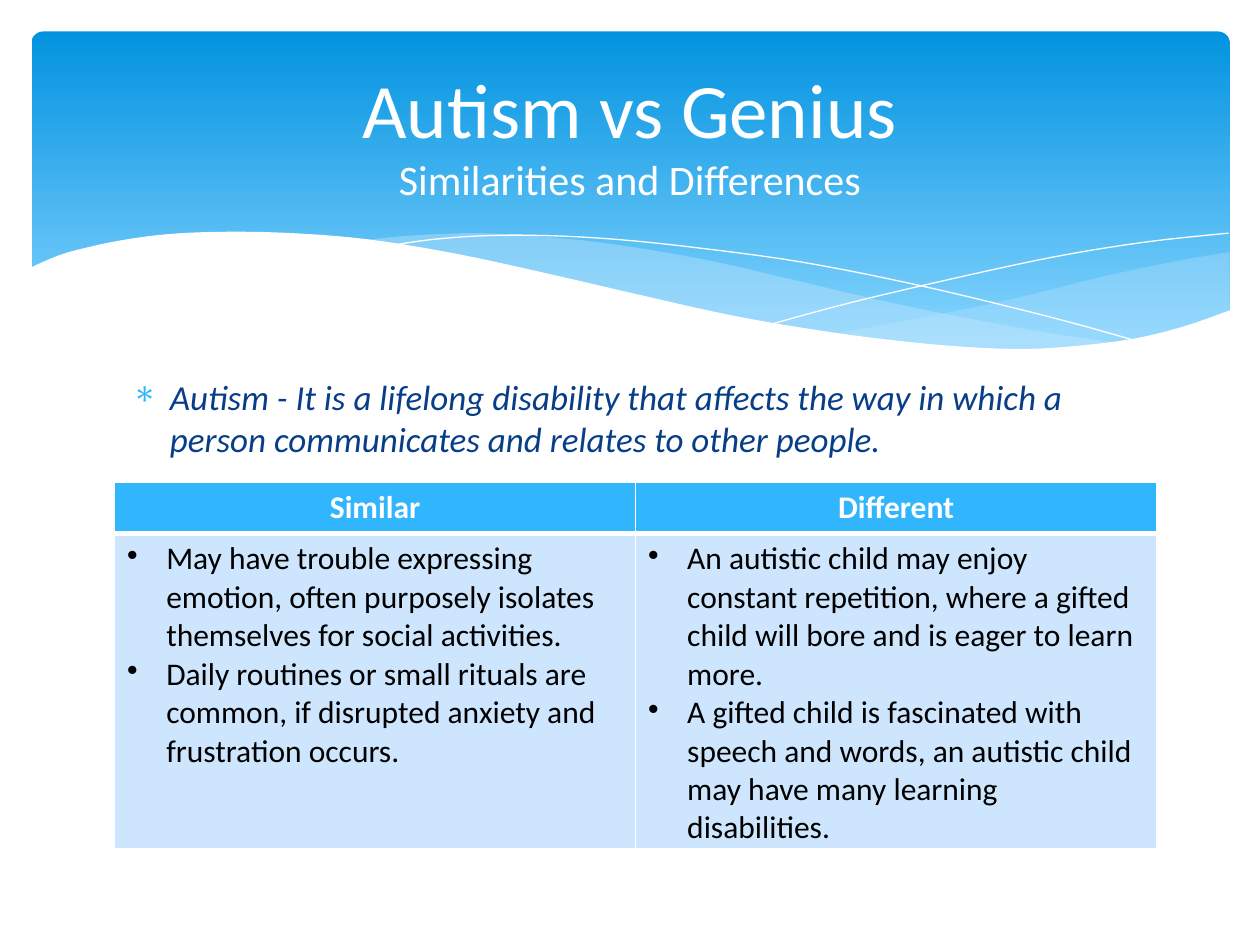
from lxml import etree
from pptx import Presentation
from pptx import util as u
from pptx.dml.color import RGBColor
from pptx.enum import shapes, text
from pptx.oxml import ns

WHITE = RGBColor(0xFF, 0xFF, 0xFF)
BLACK = RGBColor(0x00, 0x00, 0x00)
DEEP_BLUE = RGBColor(0x02, 0x93, 0xE0)
LIGHT_BLUE = RGBColor(0x83, 0xD3, 0xFE)
SKY = RGBColor(0x31, 0xB6, 0xFD)
PALE_WAVE = RGBColor(0xC6, 0xE7, 0xFC)
PALE_CELL = RGBColor(0xCE, 0xE5, 0xFE)
NAVY = RGBColor(0x07, 0x3E, 0x87)
FONT = "Calibri"

# The slide is a grid of 100 columns by 75 rows; boxes are (column, row, columns, rows)
COLUMNS, ROWS = 100, 75
CELL = u.Inches(0.1)

# Wave points, in grid cells from the corner of the header band
RIGHT_SWELL_TOP = [(97.6, 20), (93.5, 20.7), (89.1, 21.6), (86.1, 22.3), (80.5, 23.7),
                   (75.3, 24.8), (70.6, 25.7), (66.1, 26.5)]
RIGHT_SWELL_BASE = [(66.1, 26.5), (70.5, 27.1), (75.7, 27.6), (80.3, 27.8), (84.4, 27.7),
                    (88.1, 27.3), (91.3, 26.7), (94.2, 25.9), (97.6, 24.7)]
LONG_SWELL_TOP = [(89.3, 27.3), (83.7, 26.5), (77.5, 25.4), (70.6, 24), (62.9, 22.2),
                  (56.9, 20.8), (51.4, 19.8), (46.5, 19.1), (42, 18.7), (38, 18.5),
                  (34.4, 18.6), (31.3, 18.8), (28.6, 19.1)]
LONG_SWELL_BASE = [(28.6, 19.1), (34.2, 19.9), (40.4, 21.1), (49.1, 23.2), (56.6, 24.8),
                   (63.4, 26.1), (69.5, 27), (74.8, 27.6), (79.6, 27.8), (84.8, 27.7),
                   (89.3, 27.3)]
FALLING_LINE = [(30.9, 19.5), (34.4, 19), (38.7, 18.7), (43.3, 18.7), (48.9, 19),
                (55.6, 19.7), (63.6, 20.8), (72.7, 22.6), (83.1, 25.1), (90.7, 27.2)]
RISING_LINE = [(61.3, 25.7), (67.2, 24.1), (74.8, 22.3), (83.6, 20.4), (91, 19.2), (97.5, 18.5)]
HEM = [(97.7, 24.6), (94, 25.9), (89.9, 26.9), (85, 27.5), (80.9, 27.7), (76.1, 27.5),
       (70.8, 27), (64.8, 26.2), (57.9, 25), (50.3, 23.3), (44.7, 22), (36.5, 20.2),
       (29.2, 19), (23, 18.5), (17.7, 18.4), (13.2, 18.6), (9.5, 19.1), (6.7, 19.7),
       (4.6, 20.3), (2.3, 21.3)]
HEM_CORNERS = [(2.3, 32.9), (97.7, 32.9)]


def place(box):
    return [u.Emu(round(length * CELL)) for length in box]


def smooth(points, steps=5):
    """Catmull-Rom curve through the points."""
    padded = [points[0], *points, points[-1]]
    curve = [points[0]]
    for a, b, c, d in zip(padded, padded[1:], padded[2:], padded[3:]):
        for step in range(1, steps + 1):
            t = step / steps
            curve.append(tuple(
                (2 * q + (r - p) * t + (2 * p - 5 * q + 4 * r - s) * t ** 2
                 + (3 * q - p - 3 * r + s) * t ** 3) / 2
                for p, q, r, s in zip(a, b, c, d)))
    return curve


def add_wave(slide, box, points, color, opacity=100, closed=True):
    start, *rest = [tuple(place(point)) for point in points]
    builder = slide.shapes.build_freeform(*start)
    builder.add_line_segments(rest, close=closed)
    wave = builder.convert_to_shape(*place(box[:2]))
    wave.shadow.inherit = False
    if not closed:
        wave.fill.background()
        wave.line.color.rgb = color
        wave.line.width = u.Pt(0)
        return
    wave.line.fill.background()
    wave.fill.solid()
    wave.fill.fore_color.rgb = color
    if opacity < 100:
        tint = wave.fill._xPr.find(".//" + ns.qn("a:srgbClr"))
        etree.SubElement(tint, ns.qn("a:alpha"), val=str(opacity * 1000))


def add_header(slide, box):
    left, top, width, _ = box
    panel = slide.shapes.add_shape(shapes.MSO_SHAPE.ROUNDED_RECTANGLE,
                                   *place((left + 2.5, top + 2.5, width - 4.9, 27)))
    panel.adjustments[0] = 0.034
    panel.shadow.inherit = False
    panel.line.fill.background()
    panel.fill.gradient()
    panel.fill.gradient_angle = 270
    for stop, color, position in zip(panel.fill.gradient_stops,
                                     (DEEP_BLUE, LIGHT_BLUE), (0, 0.9)):
        stop.color.rgb = color
        stop.position = position

    add_wave(slide, box, smooth(RIGHT_SWELL_TOP) + smooth(RIGHT_SWELL_BASE), PALE_WAVE, 29)
    add_wave(slide, box, smooth(LONG_SWELL_TOP) + smooth(LONG_SWELL_BASE), PALE_WAVE, 40)
    for thread in (FALLING_LINE, RISING_LINE):
        add_wave(slide, box, smooth(thread), WHITE, closed=False)
    add_wave(slide, box, smooth(HEM) + HEM_CORNERS, WHITE)


def style_runs(paragraph, size, color, bold=False, italic=False):
    for run in paragraph.runs:
        run.font.name = FONT
        run.font.size = u.Pt(size)
        run.font.color.rgb = color
        run.font.bold = bold
        run.font.italic = italic


def set_bullet(paragraph, mark, indent, color=None):
    properties = paragraph._p.get_or_add_pPr()
    properties.set("marL", str(u.Inches(indent)))
    properties.set("indent", str(-u.Inches(indent)))
    if color is not None:
        holder = etree.SubElement(properties, ns.qn("a:buClr"))
        etree.SubElement(holder, ns.qn("a:srgbClr"), val=str(color))
    etree.SubElement(properties, ns.qn("a:buChar"), char=mark)


def add_title(slide, box, heading, subheading):
    frame = slide.shapes.add_textbox(*place(box)).text_frame
    frame.word_wrap = True
    frame.vertical_anchor = text.MSO_ANCHOR.MIDDLE
    title = frame.paragraphs[0]
    title.text = f"{heading}\v{subheading}"
    title.alignment = text.PP_ALIGN.CENTER
    style_runs(title, 44, WHITE)
    title.runs[1].font.size = u.Pt(24)


def add_definition(slide, box, wording):
    frame = slide.shapes.add_textbox(*place(box)).text_frame
    frame.word_wrap = True
    definition = frame.paragraphs[0]
    definition.text = wording
    definition.space_before = u.Pt(4)
    set_bullet(definition, "∗", 0.3, SKY)
    style_runs(definition, 20, NAVY, italic=True)


def set_borders(cell, bottom=1):
    properties = cell._tc.get_or_add_tcPr()
    for index, (side, width) in enumerate((("L", 1), ("R", 1), ("T", 1), ("B", bottom))):
        edge = etree.Element(ns.qn(f"a:ln{side}"), w=str(u.Pt(width)))
        fill = etree.SubElement(edge, ns.qn("a:solidFill"))
        etree.SubElement(fill, ns.qn("a:srgbClr"), val=str(WHITE))
        properties.insert(index, edge)


def add_comparison(slide, box, comparison):
    table = slide.shapes.add_table(2, len(comparison), *place(box)).table
    header_rows = 4.05
    table.rows[0].height, table.rows[1].height = place((header_rows, box[3] - header_rows))
    for column, (heading, points) in enumerate(comparison.items()):
        head, body = table.cell(0, column), table.cell(1, column)
        for cell, color, bottom in ((head, SKY, 3), (body, PALE_CELL, 1)):
            cell.fill.solid()
            cell.fill.fore_color.rgb = color
            set_borders(cell, bottom)
        head.text = heading
        label = head.text_frame.paragraphs[0]
        label.alignment = text.PP_ALIGN.CENTER
        style_runs(label, 18, WHITE, bold=True)
        body.text = "\n".join(points)
        for point in body.text_frame.paragraphs:
            set_bullet(point, "•", 0.31)
            style_runs(point, 18, BLACK)


def main():
    deck = Presentation()
    deck.slide_width, deck.slide_height = place((COLUMNS, ROWS))
    slide = deck.slides.add_slide(deck.slide_layouts[6])

    add_header(slide, (0, 0, COLUMNS, 33))
    add_definition(slide, (9.5, 29.3, 81, 37.7),
                   "Autism - It is a lifelong disability that affects the way in which "
                   "a person communicates and relates to other people.")
    add_title(slide, (5, 3.7, 90, 13.7), "Autism vs Genius", "Similarities and Differences")
    add_comparison(slide, (9.1, 38.3, 82.7, 29.1), {
        "Similar": [
            "May have trouble expressing emotion, often purposely isolates themselves "
            "for social activities.",
            "Daily routines or small rituals are common, if disrupted anxiety and "
            "frustration occurs."],
        "Different": [
            "An autistic child may enjoy constant repetition, where a gifted child will "
            "bore and is eager to learn more.",
            "A gifted child is fascinated with speech and words, an autistic child may "
            "have many learning disabilities."],
    })
    deck.save("out.pptx")


if __name__ == "__main__":
    main()
